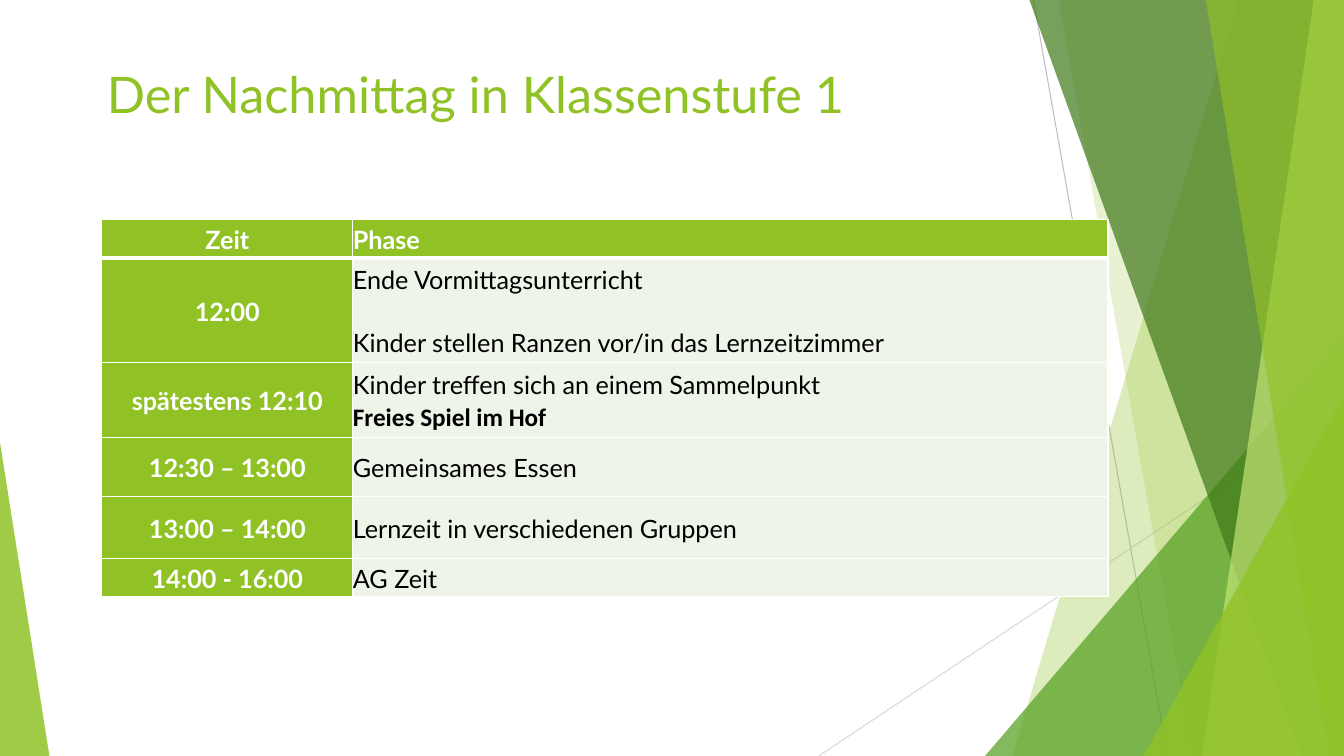
from lxml import etree
from pptx import Presentation
from pptx.dml.color import RGBColor
from pptx.enum.shapes import MSO_CONNECTOR as CONN
from pptx.enum.text import MSO_ANCHOR as ANCHOR, PP_ALIGN as ALIGN
from pptx.oxml.ns import qn
from pptx.util import Inches, Pt

WHITE = RGBColor(0xFF, 0xFF, 0xFF)
BLACK = RGBColor(0, 0, 0)
GREEN = RGBColor(0x90, 0xC2, 0x26)
MID_GREEN = RGBColor(0x54, 0xA0, 0x21)
DARK_GREEN = RGBColor(0x3F, 0x78, 0x19)
LIME = RGBColor(0xC0, 0xE4, 0x74)
PALE = RGBColor(0xEE, 0xF4, 0xE7)
GREY = RGBColor(0xBF, 0xBF, 0xBF)
LIGHT_GREY = RGBColor(0xD9, 0xD9, 0xD9)

FONT = "Lato"
W, H = 13.33, 7.5

# Thin lines: start, end, colour
RAYS = [
    ((10.25, 0), (11.58, H), GREY),
    ((W, 4.03), (8.12, H), LIGHT_GREY),
]
# Translucent facets: corners, colour, opacity in percent
FACETS = [
    ([(12.28, 0), (W, 0), (W, H), (10.04, H)], GREEN, 30),
    ([(10.5, 0), (W, 0), (W, H), (11.83, H)], GREEN, 20),
    ([(9.77, H), (W, 3.33), (W, H)], MID_GREEN, 72),
    ([(10.21, 0), (W, 0), (W, H), (12.91, H)], DARK_GREEN, 70),
    ([(13.03, 0), (W, 0), (W, H), (11.92, H)], LIME, 70),
    ([(11.96, 0), (W, 0), (W, H), (13.18, H)], GREEN, 65),
    ([(11.34, H), (W, 3.93), (W, H)], GREEN, 80),
    ([(0, H), (0, 4.39), (0.49, H)], GREEN, 85),
]

# Row height, time, phase lines
SCHEDULE = [
    (0.38, "Zeit", ["Phase"]),
    (1.04, "12:00", ["Ende Vormittagsunterricht",
                     "Kinder stellen Ranzen vor/in das Lernzeitzimmer"]),
    (0.74, "spätestens 12:10", ["Kinder treffen sich an einem Sammelpunkt",
                                "Freies Spiel im Hof"]),
    (0.59, "12:30 – 13:00", ["Gemeinsames Essen"]),
    (0.61, "13:00 – 14:00", ["Lernzeit in verschiedenen Gruppen"]),
    (0.38, "14:00 - 16:00", ["AG Zeit"]),
]


def add_ray(slide, start, end, color):
    line = slide.shapes.add_connector(
        CONN.STRAIGHT, *(Inches(v) for v in start + end))
    line.line.color.rgb = color
    line.line.width = Pt(0.75)
    etree.SubElement(line._element.spPr, qn("a:effectLst"))


def add_facet(slide, corners, color, opacity):
    points = [(Inches(x), Inches(y)) for x, y in corners]
    builder = slide.shapes.build_freeform(*points[0])
    builder.add_line_segments(points[1:], close=True)
    sp = builder.convert_to_shape()
    sp.shadow.inherit = False
    sp.fill.solid()
    sp.fill.fore_color.rgb = color
    sp.line.fill.background()
    clr = sp._element.spPr.find(qn("a:solidFill"))[0]
    etree.SubElement(clr, qn("a:alpha"), val=str(opacity * 1000))


def add_background(slide):
    for ray in RAYS:
        add_ray(slide, *ray)
    for facet in FACETS:
        add_facet(slide, *facet)


def add_title(slide, left, top, width, height):
    title = slide.shapes.title
    title.left, title.top = Inches(left), Inches(top)
    title.width, title.height = Inches(width), Inches(height)
    tf = title.text_frame
    tf.text = "Der Nachmittag in Klassenstufe 1"
    tf.vertical_anchor = ANCHOR.TOP
    tf.margin_left = tf.margin_right = Inches(0.05)
    tf.margin_top = tf.margin_bottom = Inches(0.05)
    p = tf.paragraphs[0]
    p.alignment = ALIGN.LEFT
    p.font.name, p.font.size = FONT, Pt(36)
    p.font.color.rgb = GREEN


def set_borders(cell, **widths):
    """Draw white cell borders; widths in points by side."""
    tc_pr = cell._tc.get_or_add_tcPr()
    for i, (side, width) in enumerate(widths.items()):
        ln = etree.Element(qn("a:ln" + side), w=str(Pt(width)))
        fill = etree.SubElement(ln, qn("a:solidFill"))
        etree.SubElement(fill, qn("a:srgbClr"), val=str(WHITE))
        tc_pr.insert(i, ln)


def fill_cell(cell, lines, fill, color, bold, align):
    cell.fill.solid()
    cell.fill.fore_color.rgb = fill
    cell.vertical_anchor = ANCHOR.MIDDLE
    cell.margin_left = cell.margin_right = 0
    cell.margin_top = cell.margin_bottom = 0
    tf = cell.text_frame
    tf.text = "\n".join(lines)
    for p in tf.paragraphs:
        p.alignment = align
        p.line_spacing = 1.07
        p.font.name, p.font.size = FONT, Pt(18)
        p.font.bold = bold
        p.font.color.rgb = color


def add_schedule(slide, left, top, width, height):
    time_width = 2.49
    table = slide.shapes.add_table(
        len(SCHEDULE), 2, Inches(left), Inches(top),
        Inches(width), Inches(height)).table
    table.columns[0].width = Inches(time_width)
    table.columns[1].width = Inches(width - time_width)

    for i, (row_height, time, phase) in enumerate(SCHEDULE):
        table.rows[i].height = Inches(row_height)
        header = i == 0
        time_cell, phase_cell = table.cell(i, 0), table.cell(i, 1)
        fill_cell(time_cell, [time], GREEN, WHITE, True, ALIGN.CENTER)
        fill_cell(phase_cell, phase, GREEN if header else PALE,
                  WHITE if header else BLACK, header, ALIGN.LEFT)
        for cell in (time_cell, phase_cell):
            set_borders(cell, L=1, R=1, T=3 if i == 1 else 1,
                        B=3 if header else 1)

    # One line of air between the two noon entries
    table.cell(1, 1).text_frame.paragraphs[1].space_before = Pt(22)
    # Emphasised free play
    free_play = table.cell(2, 1).text_frame.paragraphs[1]
    free_play.font.name, free_play.font.bold = "Calibri", True


def main():
    prs = Presentation()
    prs.slide_width, prs.slide_height = Inches(W), Inches(H)
    slide = prs.slides.add_slide(prs.slide_layouts[5])
    add_background(slide)
    add_title(slide, 1.01, 0.58, 7.61, 1.1)
    add_schedule(slide, 1.01, 2.18, 9.98, 3.74)
    prs.save("out.pptx")


if __name__ == "__main__":
    main()
